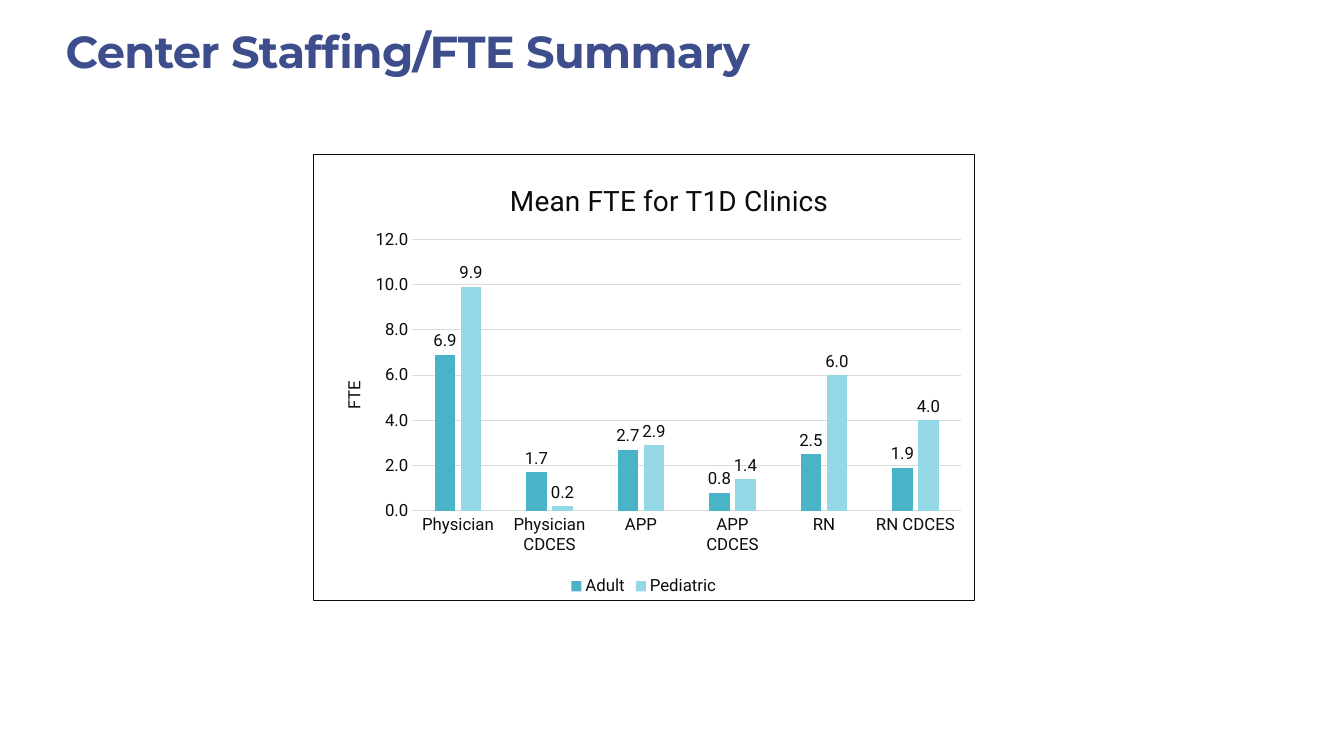
from lxml import etree
from pptx import Presentation
from pptx.chart.data import CategoryChartData
from pptx.dml.color import RGBColor
from pptx.enum.chart import XL_CHART_TYPE as Kind, XL_LABEL_POSITION as Label
from pptx.enum.chart import XL_LEGEND_POSITION as Legend, XL_TICK_MARK as Tick
from pptx.enum.text import MSO_ANCHOR as Anchor, PP_ALIGN as Align
from pptx.oxml import parse_xml
from pptx.oxml.ns import nsdecls, qn
from pptx.util import Inches, Pt

NAVY = RGBColor(0x3E, 0x4E, 0x8D)
INK = RGBColor(0x0C, 0x0C, 0x0C)
GRID = RGBColor(0xDB, 0xDB, 0xDB)
TEAL = RGBColor(0x49, 0xB3, 0xC7)
SKY = RGBColor(0x94, 0xD8, 0xE8)

TITLE = "Center Staffing/FTE Summary"
HEADING = "Mean FTE for T1D Clinics"
ROLES = ["Physician", "Physician CDCES", "APP", "APP CDCES", "RN", "RN CDCES"]
CLINICS = [
    ("Adult", TEAL, (6.9, 1.7, 2.7, 0.8, 2.5, 1.9)),
    ("Pediatric", SKY, (9.9, 0.2, 2.9, 1.4, 6.0, 4.0)),
]


def style(font, size, color=INK, name="Roboto", bold=False):
    font.size, font.name, font.bold = Pt(size), name, bold
    font.color.rgb = color


def place(part, **spots):
    """Set a manual layout, in fractions of the chart, on a chart part."""
    for old in part.findall(qn("c:layout")):
        part.remove(old)
    layout = parse_xml(f"<c:layout {nsdecls('c')}><c:manualLayout/></c:layout>")
    for tag, val in spots.items():
        etree.SubElement(layout[0], qn(f"c:{tag}")).set("val", str(val))
    text = part.find(qn("c:tx"))
    if text is None:
        part.insert(0, layout)
    else:
        text.addnext(layout)


def caption(title, text, size, x, y):
    title.text_frame.text = text
    style(title.text_frame.paragraphs[0].runs[0].font, size)
    title._element.get_or_add_overlay().set("val", "0") if hasattr(
        title._element, "get_or_add_overlay") else None
    place(title._element, xMode="edge", yMode="edge", x=x, y=y)


def add_title(slide):
    title = slide.shapes.title
    title.left, title.top = Inches(0.6), Inches(0.25)
    title.width, title.height = Inches(12), Inches(0.5)
    frame = title.text_frame
    frame.text = TITLE
    frame.vertical_anchor = Anchor.MIDDLE
    frame.margin_left = frame.margin_right = Inches(0.05)
    frame.margin_top = frame.margin_bottom = Inches(0.05)
    line = frame.paragraphs[0]
    line.alignment = Align.LEFT
    style(line.runs[0].font, 32, NAVY, "Montserrat", True)
    line.runs[0].font._element.set("spc", "-50")


def add_bars(slide):
    data = CategoryChartData(number_format="0.0")
    data.categories = ROLES
    for name, _, vals in CLINICS:
        data.add_series(name, vals)
    chart = slide.shapes.add_chart(
        Kind.COLUMN_CLUSTERED, Inches(3.1), Inches(1.53),
        Inches(6.57), Inches(4.43), data).chart
    style(chart.font, 12)
    caption(chart.chart_title, HEADING, 20, 0.29, 0.05)

    plot = chart.plots[0]
    plot.gap_width, plot.overlap = 219, -27
    plot.vary_by_categories = False
    for bars, (_, color, _) in zip(plot.series, CLINICS):
        bars.format.fill.solid()
        bars.format.fill.fore_color.rgb = color
        labels = bars.data_labels
        labels.show_value = True
        labels.position = Label.OUTSIDE_END
        labels.number_format, labels.number_format_is_linked = "0.0", False
        style(labels.font, 12)

    roles, scale = chart.category_axis, chart.value_axis
    for axis in (roles, scale):
        axis.major_tick_mark = axis.minor_tick_mark = Tick.NONE
        style(axis.tick_labels.font, 12)
    scale.minimum_scale, scale.maximum_scale, scale.major_unit = 0, 12, 2
    scale.tick_labels.number_format = "0.0"
    scale.tick_labels.number_format_is_linked = False
    scale.format.line.fill.background()
    for line in (roles.format.line, scale.major_gridlines.format.line):
        line.color.rgb, line.width = GRID, Pt(0.75)
    caption(scale.axis_title, "FTE", 12, 0.04, 0.5)

    chart.has_legend = True
    chart.legend.position = Legend.BOTTOM
    chart.legend.include_in_layout = False
    style(chart.legend.font, 12)

    space = chart._chartSpace
    place(space.chart.plotArea, layoutTarget="inner", xMode="edge", yMode="edge",
          x=0.15, y=0.19, w=0.83, h=0.61)
    space.chart.addnext(parse_xml(
        f"<c:spPr {nsdecls('c', 'a')}><a:noFill/><a:ln w='{Pt(0.75)}'><a:solidFill>"
        f"<a:srgbClr val='{INK}'/></a:solidFill></a:ln></c:spPr>"))


def main():
    deck = Presentation()
    deck.slide_width, deck.slide_height = Inches(13.33), Inches(7.5)
    slide = deck.slides.add_slide(deck.slide_layouts[5])
    add_title(slide)
    add_bars(slide)
    deck.save("out.pptx")


if __name__ == "__main__":
    main()
